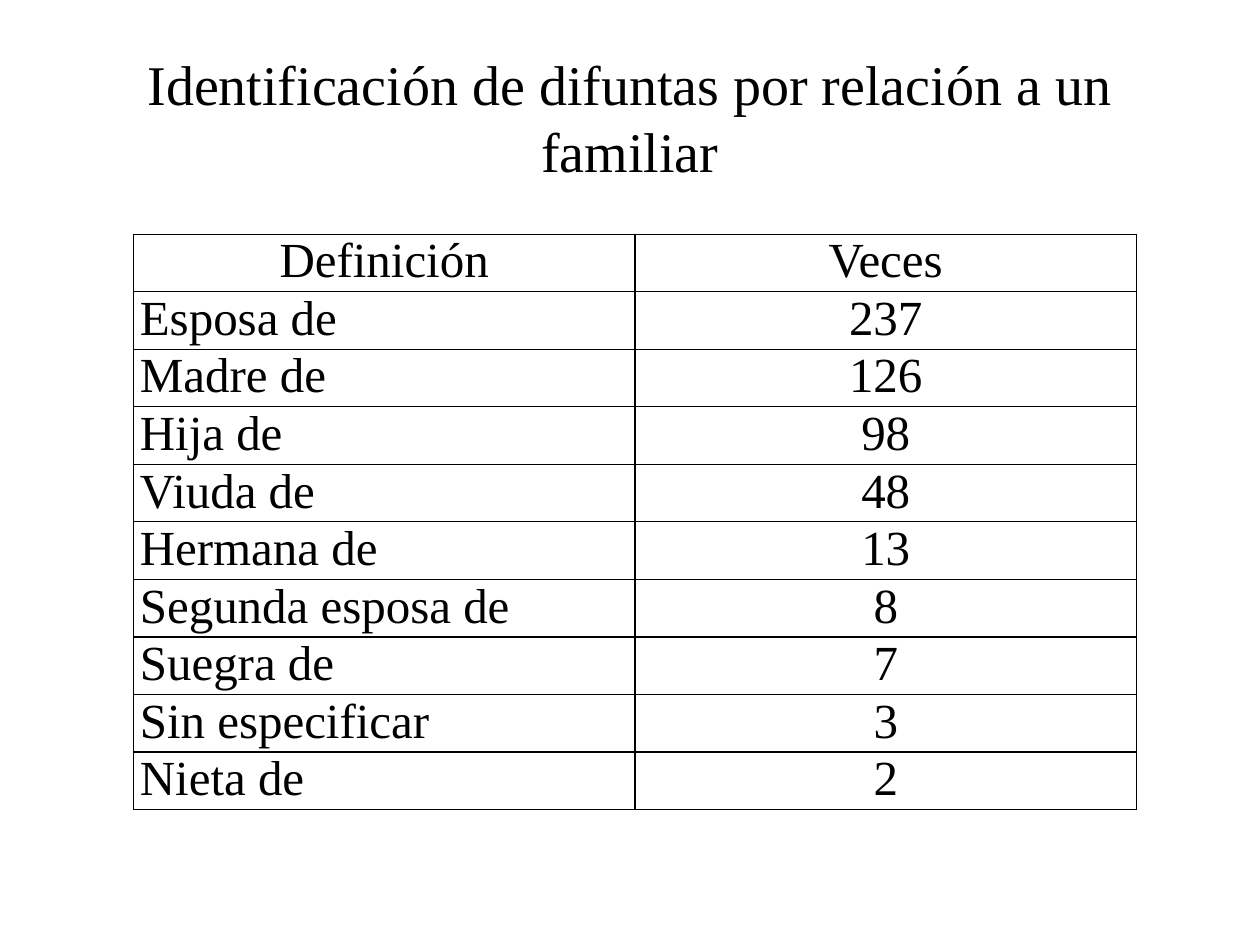
from dataclasses import dataclass

from lxml import etree
from pptx import Presentation
from pptx import util as u
from pptx.dml.color import RGBColor
from pptx.enum import text
from pptx.oxml.ns import qn

BLACK = RGBColor(0x00, 0x00, 0x00)
WHITE = RGBColor(0xFF, 0xFF, 0xFF)
FONT = "Times New Roman"
COLUMN_WIDTH = u.Cm(10.11)
ROW_HEIGHT = u.Cm(1.16)
BORDER_WIDTH = u.Pt(0.75)


@dataclass(frozen=True)
class Entry:
    definition: str
    count: str


ENTRIES = [
    Entry("Definición", "Veces"),
    Entry("Esposa de", "237"),
    Entry("Madre de", "126"),
    Entry("Hija de", "98"),
    Entry("Viuda de", "48"),
    Entry("Hermana de", "13"),
    Entry("Segunda esposa de", "8"),
    Entry("Suegra de", "7"),
    Entry("Sin especificar", "3"),
    Entry("Nieta de", "2"),
]


def write_text(frame, content: str, size: float, align) -> None:
    frame.text = content
    para = frame.paragraphs[0]
    para.alignment = align
    for span in para.runs:
        span.font.name = FONT
        span.font.size = u.Pt(size)
        span.font.color.rgb = BLACK


def add_borders(cell) -> None:
    properties = cell._tc.get_or_add_tcPr()
    for side in ("a:lnL", "a:lnR", "a:lnT", "a:lnB"):
        line = etree.SubElement(properties, qn(side), w=str(BORDER_WIDTH))
        fill = etree.SubElement(line, qn("a:solidFill"))
        etree.SubElement(fill, qn("a:srgbClr"), val=str(BLACK))


def fill_cell(cell, content: str, align) -> None:
    cell.margin_left = cell.margin_right = u.Cm(0.13)
    cell.margin_top = cell.margin_bottom = 0
    cell.vertical_anchor = text.MSO_ANCHOR.TOP
    write_text(cell.text_frame, content, 28, align)
    add_borders(cell)
    cell.fill.background()


def add_title(page, content: str) -> None:
    title = page.shapes.title
    title.left, title.top = u.Cm(1.27), u.Cm(0.76)
    title.width, title.height = u.Cm(22.86), u.Cm(3.18)
    title.text_frame.word_wrap = True
    title.text_frame.vertical_anchor = text.MSO_ANCHOR.MIDDLE
    write_text(title.text_frame, content, 32, text.PP_ALIGN.CENTER)


def add_entries(page, entries: list[Entry]) -> None:
    table = page.shapes.add_table(
        len(entries), 2, u.Cm(2.69), u.Cm(4.72),
        COLUMN_WIDTH * 2, ROW_HEIGHT * len(entries),
    ).table
    table.first_row = False
    table.horz_banding = False
    for column in table.columns:
        column.width = COLUMN_WIDTH
    for index, entry in enumerate(entries):
        table.rows[index].height = ROW_HEIGHT
        align = text.PP_ALIGN.LEFT if index else text.PP_ALIGN.CENTER
        fill_cell(table.cell(index, 0), entry.definition, align)
        fill_cell(table.cell(index, 1), entry.count, text.PP_ALIGN.CENTER)


def main() -> None:
    deck = Presentation()
    deck.slide_width, deck.slide_height = u.Cm(25.4), u.Cm(19.05)
    page = deck.slides.add_slide(deck.slide_layouts[5])
    page.background.fill.solid()
    page.background.fill.fore_color.rgb = WHITE
    add_title(page, "Identificación de difuntas por relación a un familiar")
    add_entries(page, ENTRIES)
    deck.save("out.pptx")


if __name__ == "__main__":
    main()
